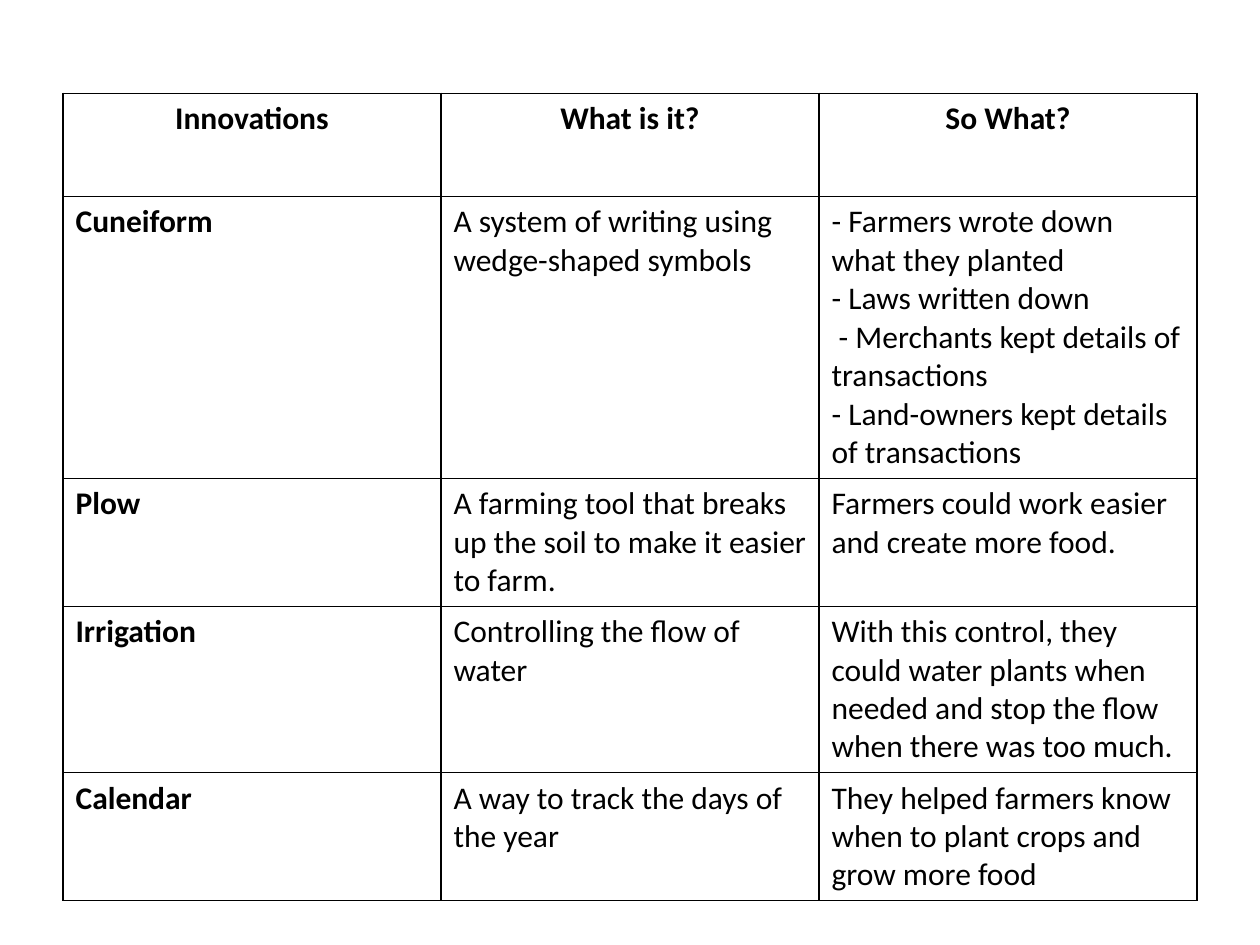
import pptx
import pptx.dml.color
import pptx.enum.text
import pptx.oxml
import pptx.oxml.ns
import pptx.util
from pptx.util import Inches

COLORS = {"ink": "000000", "paper": "FFFFFF"}
BORDER_WIDTH = pptx.util.Pt(1)

ROWS = [
    ("Innovations", "What is it?", "So What?"),
    (
        "Cuneiform",
        "A system of writing using wedge-shaped symbols",
        "- Farmers wrote down what they planted\n"
        "- Laws written down\n"
        " - Merchants kept details of transactions\n"
        "- Land-owners kept details of transactions",
    ),
    (
        "Plow",
        "A farming tool that breaks up the soil to make it easier to farm.",
        "Farmers could work easier and create more food.",
    ),
    (
        "Irrigation",
        "Controlling the flow of water",
        "With this control, they could water plants when needed "
        "and stop the flow when there was too much.",
    ),
    (
        "Calendar",
        "A way to track the days of the year",
        "They helped farmers know when to plant crops and grow more food",
    ),
]
ROW_HEIGHTS = [0.82, 1.8, 0.82, 0.82, 0.82]


def add_borders(cell):
    """Draw a solid line on all four sides; lines must precede the fill."""
    properties = cell._tc.get_or_add_tcPr()
    for position, side in enumerate(("lnL", "lnR", "lnT", "lnB")):
        line = pptx.oxml.parse_xml(
            f'<a:{side} {pptx.oxml.ns.nsdecls("a")} w="{BORDER_WIDTH}">'
            f'<a:solidFill><a:srgbClr val="{COLORS["ink"]}"/></a:solidFill>'
            f"</a:{side}>"
        )
        properties.insert(position, line)


# Slide
presentation = pptx.Presentation()
presentation.slide_width = Inches(10)
presentation.slide_height = Inches(7.5)
slide = presentation.slides.add_slide(presentation.slide_layouts[6])

# Table grid: three equal columns, rows grow with their text
table = slide.shapes.add_table(
    len(ROWS), len(ROWS[0]),
    Inches(0.5), Inches(0.74), Inches(9), Inches(sum(ROW_HEIGHTS)),
).table
table.horz_banding = False
for row, height in zip(table.rows, ROW_HEIGHTS):
    row.height = Inches(height)

# Cells: bold centred header, bold first column
for row_index, texts in enumerate(ROWS):
    for column_index, text in enumerate(texts):
        cell = table.cell(row_index, column_index)
        cell.fill.solid()
        cell.fill.fore_color.rgb = pptx.dml.color.RGBColor.from_string(COLORS["paper"])
        add_borders(cell)
        cell.text_frame.text = text
        for paragraph in cell.text_frame.paragraphs:
            if row_index == 0:
                paragraph.alignment = pptx.enum.text.PP_ALIGN.CENTER
            for run in paragraph.runs:
                run.font.name = "Calibri"
                run.font.size = pptx.util.Pt(18)
                run.font.bold = row_index == 0 or column_index == 0
                run.font.color.rgb = pptx.dml.color.RGBColor.from_string(COLORS["ink"])

presentation.save("out.pptx")
